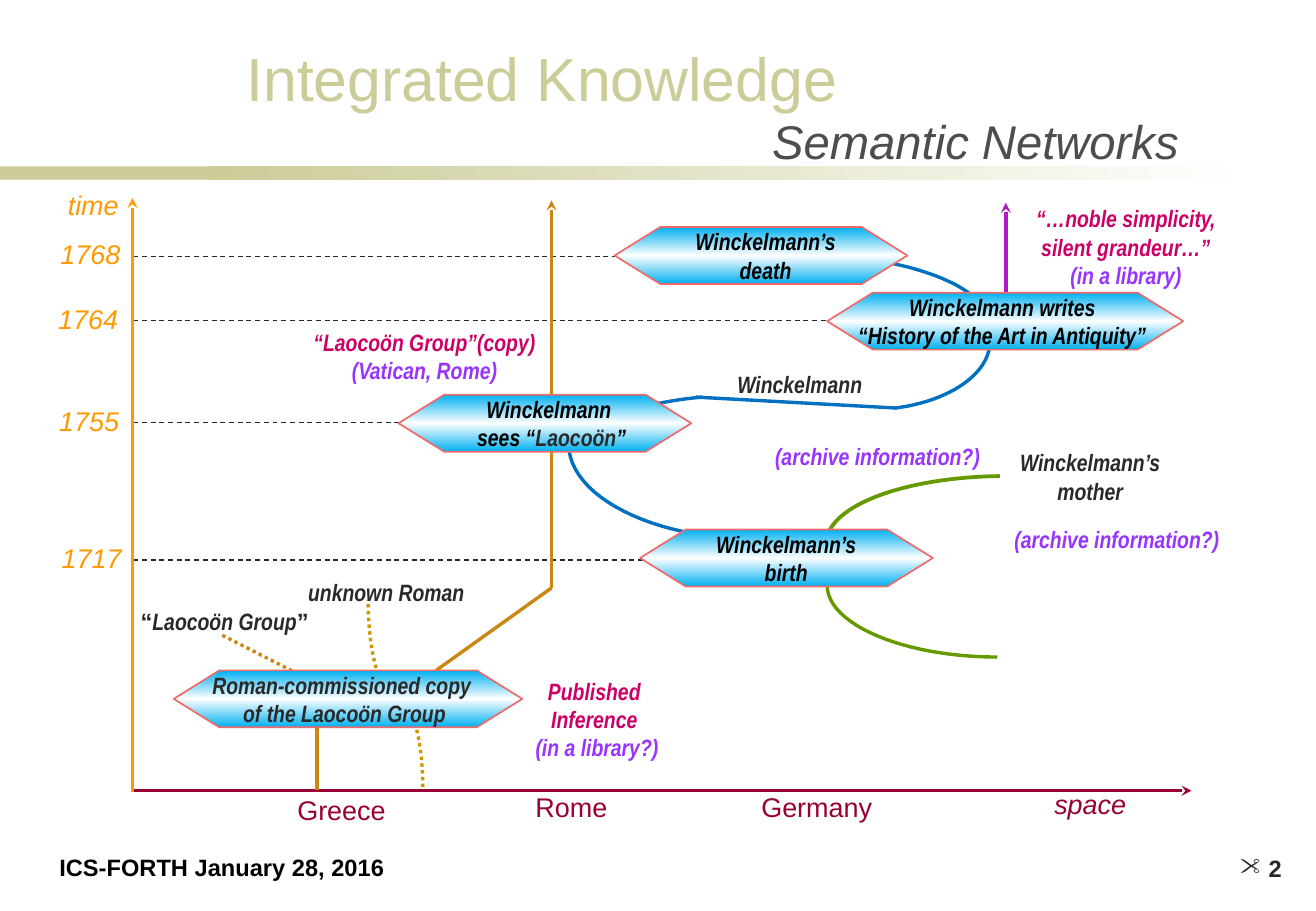
from lxml import etree
from pptx import Presentation
from pptx.dml.color import RGBColor
from pptx.enum.dml import MSO_LINE
from pptx.enum.shapes import MSO_CONNECTOR, MSO_SHAPE
from pptx.enum.text import MSO_ANCHOR, PP_ALIGN
from pptx.oxml.ns import qn
from pptx.util import Pt

DASH, DOT = MSO_LINE.DASH, MSO_LINE.ROUND_DOT
STRAIGHT = MSO_CONNECTOR.STRAIGHT
RECT, HEXAGON = MSO_SHAPE.RECTANGLE, MSO_SHAPE.HEXAGON
TOP, MIDDLE, BOTTOM = MSO_ANCHOR.TOP, MSO_ANCHOR.MIDDLE, MSO_ANCHOR.BOTTOM
LEFT, CENTER, RIGHT = PP_ALIGN.LEFT, PP_ALIGN.CENTER, PP_ALIGN.RIGHT

COLORS = {
    "khaki": "CCCC99", "white": "FFFFFF", "black": "000000", "dark": "292929",
    "gray": "4D4D4D", "orange": "FF9900", "wine": "990033", "brown": "CC8614",
    "gold": "CC9900", "purple": "B219C7", "violet": "9933FF", "pink": "CC0066",
    "blue": "0070C0", "green": "669900", "sky": "00B0F0", "coral": "F16969",
}
FONTS = {
    "heading": {"name": "Arial", "size": Pt(36)},
    "title": {"name": "Arial", "size": Pt(28), "italic": True},
    "axis": {"name": "Arial", "size": Pt(16), "italic": True},
    "place": {"name": "Arial", "size": Pt(16)},
    "footer": {"name": "Arial", "size": Pt(14), "bold": True},
    "note": {"name": "Arial Narrow", "size": Pt(14), "bold": True, "italic": True},
}


class Diagram:
    """Draws styled elements, measured in points, on one slide."""

    def __init__(self, slide):
        self.shapes = slide.shapes

    def color(self, name):
        return RGBColor.from_string(COLORS[name])

    def stroke(self, line, color, width, dash=None):
        line.color.rgb = self.color(color)
        line.width = Pt(width)
        if dash:
            line.dash_style = dash

    def gradient(self, s, names, angle):
        s.fill.gradient()
        s.fill.gradient_angle = angle
        stops = s._element.spPr.find(qn("a:gradFill")).find(qn("a:gsLst"))
        for stop in list(stops):
            stops.remove(stop)
        for i, name in enumerate(names):
            pos = str(i * 100000 // (len(names) - 1))
            stop = etree.SubElement(stops, qn("a:gs"), pos=pos)
            etree.SubElement(stop, qn("a:srgbClr"), val=COLORS[name])

    def shape(self, kind, box, fills, angle=0):
        s = self.shapes.add_shape(kind, *map(Pt, box))
        s.shadow.inherit = False
        s.line.fill.background()
        if len(fills) > 1:
            self.gradient(s, fills, angle)
        else:
            s.fill.solid()
            s.fill.fore_color.rgb = self.color(fills[0])
        return s

    def paragraphs(self, tf, lines, style, align, spacing=None):
        for i, runs in enumerate(lines):
            p = tf.paragraphs[0] if i == 0 else tf.add_paragraph()
            p.alignment = align
            if spacing:
                p.line_spacing = Pt(spacing)
            for text, color, *other in runs:
                r = p.add_run()
                r.text = text
                for key, value in FONTS[other[0] if other else style].items():
                    setattr(r.font, key, value)
                r.font.color.rgb = self.color(color)

    def text(self, box, lines, style="note", align=CENTER, anchor=TOP):
        tf = self.shapes.add_textbox(*map(Pt, box)).text_frame
        tf.word_wrap = align == RIGHT
        tf.vertical_anchor = anchor
        self.paragraphs(tf, lines, style, align)
        return tf

    def event(self, box, lines, shift):
        s = self.shape(HEXAGON, box, ["sky", "white", "sky"], 90)
        s.adjustments[0] = 0.8
        self.stroke(s.line, "coral", 1)
        tf = s.text_frame
        tf.word_wrap = False
        tf.vertical_anchor = MIDDLE
        tf.margin_left, tf.margin_right = Pt(7.2 + shift), Pt(7.2 - shift)
        self.paragraphs(tf, lines, "note", CENTER, 16.8)

    def line(self, ends, color, width=2, dash=None, arrow=False):
        s = self.shapes.add_connector(STRAIGHT, *map(Pt, ends))
        self.stroke(s.line, color, width, dash)
        spPr = s._element.spPr
        if arrow:
            etree.SubElement(spPr.find(qn("a:ln")), qn("a:tailEnd"), type="stealth")
        etree.SubElement(spPr, qn("a:effectLst"))

    def curve(self, points, color, width=2, dash=None, steps=24):
        outline = []
        for i in range(0, len(points) - 1, 3):
            for step in range(steps + 1):
                t = step / steps
                weights = ((1 - t) ** 3, 3 * t * (1 - t) ** 2, 3 * t * t * (1 - t), t ** 3)
                outline.append([Pt(sum(w * pt[axis] for w, pt in zip(weights, points[i:i + 4])))
                                for axis in (0, 1)])
        builder = self.shapes.build_freeform(*outline[0])
        builder.add_line_segments(outline[1:], close=False)
        s = builder.convert_to_shape()
        s.shadow.inherit = False
        s.fill.background()
        self.stroke(s.line, color, width, dash)


def main():
    prs = Presentation()
    prs.slide_width, prs.slide_height = Pt(780), Pt(540)
    d = Diagram(prs.slides.add_slide(prs.slide_layouts[6]))

    d.shape(RECT, (0, 98.6, 182, 8), ["khaki"])
    d.shape(RECT, (123.8, 98.6, 618, 8), ["khaki", "white"])
    d.text((139, 20.9, 368, 51), [[("Integrated Knowledge", "khaki")]], "heading", LEFT)
    d.text((200.9, 71.3, 504.7, 32.4), [[("Semantic Networks", "gray")]],
           "title", RIGHT, BOTTOM)
    d.text((28.1, 501.8, 208, 24.5), [[("ICS-FORTH January 28, 2016", "black")]],
           "footer", LEFT)
    tf = d.text((604.8, 496.8, 162, 36), [[("2", "dark")]], "footer", RIGHT, MIDDLE)
    pPr = tf.paragraphs[0]._p.get_or_add_pPr()
    pPr.set("marL", str(Pt(17)))
    pPr.set("indent", str(-Pt(17)))
    etree.SubElement(pPr, qn("a:buFont"), typeface="Wingdings")
    etree.SubElement(pPr, qn("a:buChar"), char='"')

    curves = [
        ("blue", 2, None, [(449.3, 319.7), (387.4, 319.7), (337, 294.5), (337, 262.8)]),
        ("blue", 2, None, [(349.9, 262.1), (349.9, 249.8), (377.3, 239), (416.2, 235.4)]),
        ("blue", 2, None, [(525.6, 155.5), (563, 162.7), (586.8, 177.1), (586.8, 193)]),
        ("blue", 2, None, [(586.8, 202.3), (586.8, 221), (563.8, 237.6), (530.6, 241.9)]),
        ("green", 2.25, None, [(489.6, 322.6), (489.6, 300.2), (535, 283), (592.6, 282.2)]),
        ("green", 2, None, [(591.1, 389.5), (535.7, 389.5), (490.3, 370.1), (490.3, 347)]),
        ("gold", 2, DOT, [(250.6, 466.6), (250.6, 436), (242.9, 411.1), (233.3, 411.1),
                          (225, 411.1), (218.2, 386.3), (218.2, 355.7)]),
    ]
    for color, width, dash, points in curves:
        d.curve(points, color, width, dash)

    years = [("1768", 28.8, 152, 392.4), ("1764", 27.4, 190.1, 498.2),
             ("1755", 28, 250.6, 272.9), ("1717", 29.5, 331.9, 406.8)]
    for year, x, y, end in years:
        d.line((79, y, end, y), "dark", 0.75, DASH)
        d.text((x, y - 14.5, 50, 26.6), [[(year, "orange")]], "axis", LEFT)

    d.line((131.8, 376.6, 174.2, 398.2), "brown", dash=DOT)
    d.line((596.2, 191.5, 596.2, 120.2), "purple", arrow=True)
    d.line((78.5, 469.4, 78.5, 117.4), "orange", arrow=True)
    d.line((79.2, 468.7, 706.3, 468.7), "wine", arrow=True)
    d.line((326.9, 348.5, 326.9, 118.8), "brown", arrow=True)
    d.line((258.5, 397.4, 326.9, 348.5), "brown")
    d.line((187.9, 416.2, 187.9, 468), "brown")
    d.line((412.6, 235.4, 531.4, 241.9), "blue")

    d.text((33.1, 108, 44.6, 26.6), [[("time", "orange")]], "axis", LEFT)
    d.text((617.8, 463, 56.9, 26.6), [[("space", "wine")]], "axis", LEFT)
    for place, x, y, w in [("Greece", 169.2, 466.6, 67), ("Rome", 310.3, 465.1, 56.9),
                           ("Germany", 444.2, 465.1, 80.6)]:
        d.text((x, y, w, 26.6), [[(place, "wine")]], "place", LEFT)

    notes = [
        ((151.2, 190.8, 200.9, 41), [[("“Laocoön Group”(copy)", "pink")],
                                     [("(Vatican, Rome)", "violet")]]),
        ((422.6, 216, 103, 24.5), [[("Winckelmann", "dark")]]),
        ((606.2, 117.4, 122.4, 58.3), [[("“…noble simplicity,", "pink")],
                                       [("silent grandeur…”", "pink")],
                                       [("(in a library)", "violet")]]),
        ((75.6, 356.4, 115.2, 24.5), [[("“", "dark", "footer"), ("Laocoön Group", "dark"),
                                       ("”", "dark", "footer")]]),
        ((175, 339.1, 108, 24.5), [[("unknown Roman", "dark")]]),
        ((593.3, 307.4, 137.5, 24.5), [[("(archive information?)", "violet")]]),
        ((451.4, 258.5, 137.5, 24.5), [[("(archive information?)", "violet")]]),
        ((309.6, 397.4, 88.6, 58.3), [[("Published ", "pink")], [("Inference ", "pink")],
                                      [("(in a library?)", "violet")]]),
        ((596.9, 262.1, 98.6, 41), [[("Winckelmann’s", "dark")], [("mother", "dark")]]),
    ]
    for box, lines in notes:
        d.text(box, lines)

    events = [
        (103, 397.4, 206.6, -2, [[("Roman-commissioned copy ", "dark")],
                                 [("of the Laocoön Group", "dark")]]),
        (490.3, 173.5, 211, 0, [[("Winckelmann writes ", "black")],
                                [("“History of the Art in Antiquity” ", "black")]]),
        (379.4, 313.9, 173.5, 1.5, [[("Winckelmann’s ", "black")], [("birth ", "black")]]),
        (364.3, 134.6, 173.5, 4.3, [[("Winckelmann’s ", "black")], [("death ", "black")]]),
        (236.2, 234, 173.5, 4, [[("Winckelmann ", "black")],
                                [("sees “", "black"), ("Laocoön", "dark"), ("”", "black")]]),
    ]
    for x, y, w, shift, lines in events:
        d.event((x, y, w, 33.8), lines, shift)

    prs.save("out.pptx")


if __name__ == "__main__":
    main()
